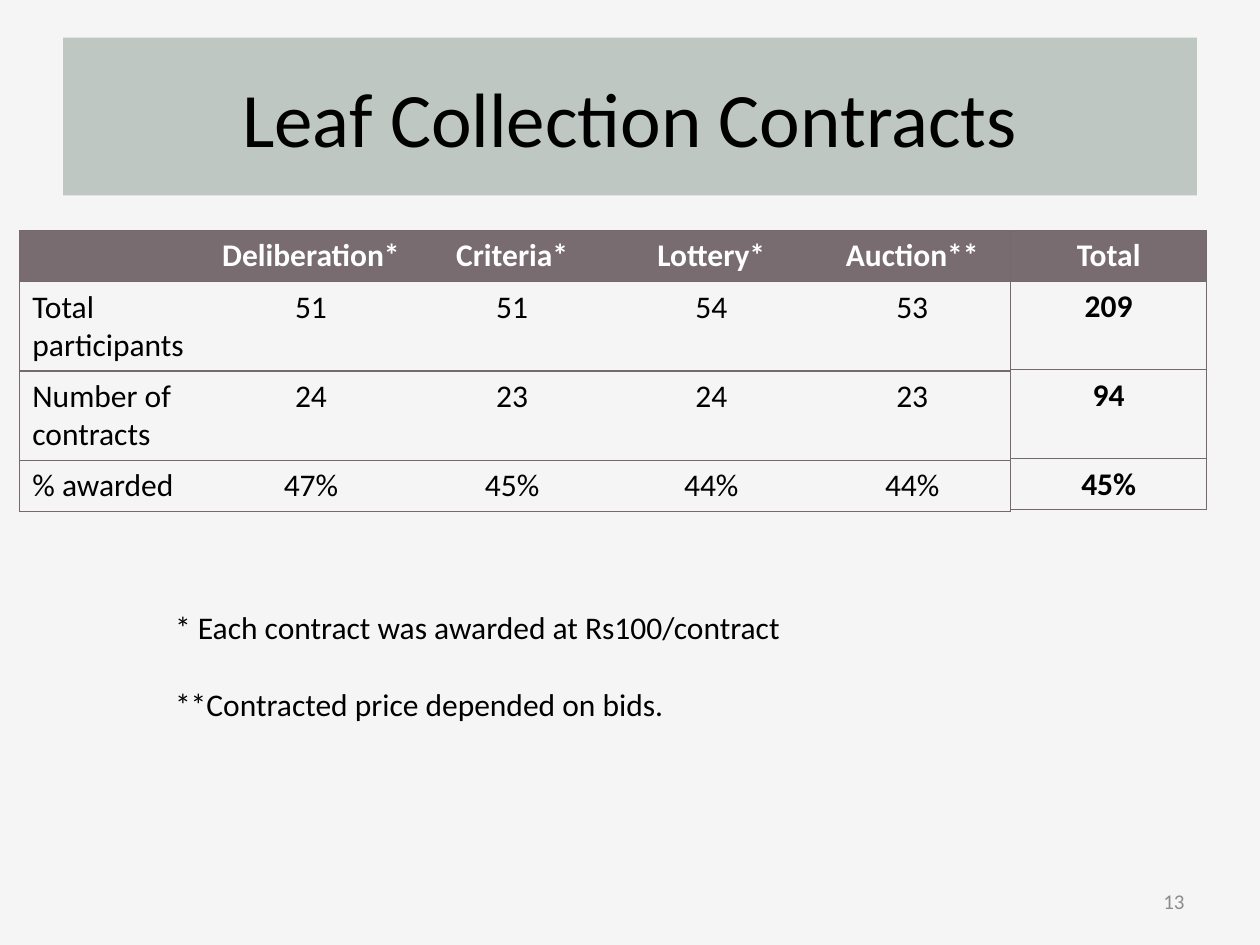
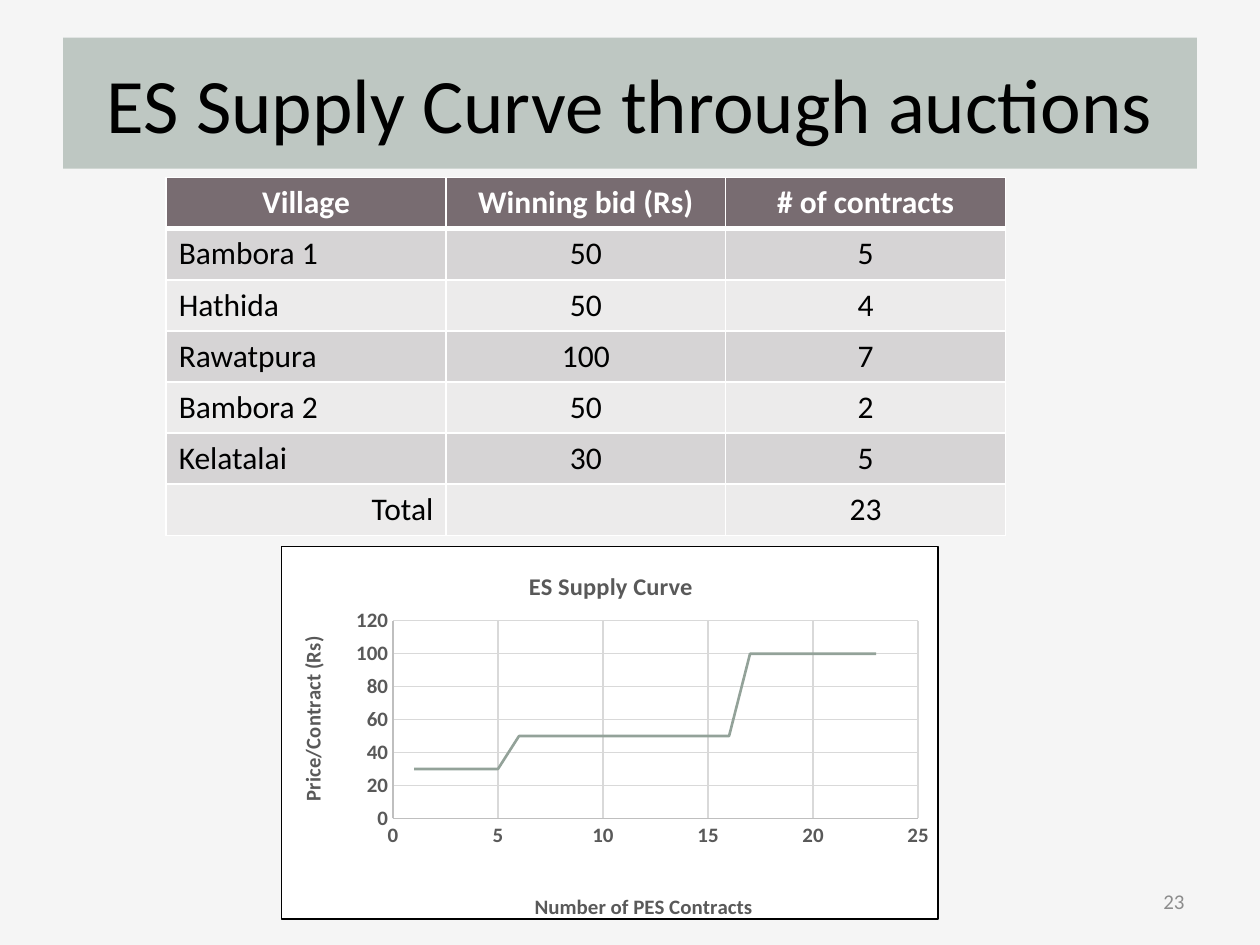
import lxml.etree
import pptx
import pptx.chart.data
import pptx.dml.color
import pptx.enum.chart
import pptx.enum.text
import pptx.oxml
import pptx.oxml.ns
import pptx.util

Cm, Pt = pptx.util.Cm, pptx.util.Pt
qn = pptx.oxml.ns.qn
ALIGN = pptx.enum.text.PP_ALIGN
MIDDLE = pptx.enum.text.MSO_ANCHOR.MIDDLE

# Content
CONTRACTS = [
    ["", "Deliberation*", "Criteria*", "Lottery*", "Auction**"],
    ["Total participants", "51", "51", "54", "53"],
    ["Number of contracts", "24", "23", "24", "23"],
    ["% awarded", "47%", "45%", "44%", "44%"],
]
CONTRACT_TOTALS = [["Total"], ["209"], ["94"], ["45%"]]
FOOTNOTES = [
    "* Each contract was awarded at Rs100/contract",
    "**Contracted price depended on bids.",
]
BID_HEADER = ["Village", "Winning bid (Rs)", "# of contracts"]
BIDS = [
    ("Bambora 1", 50, 5),
    ("Hathida", 50, 4),
    ("Rawatpura", 100, 7),
    ("Bambora 2", 50, 2),
    ("Kelatalai", 30, 5),
]

# Shared look
FONT = "Calibri"
PAGE, BAND, INK, WHITE = "F5F5F5", "BEC7C2", "000000", "FFFFFF"
HEADER, RULE, NUMBER = "786C71", "76696E", "8C8C8C"
STRIPES = ["D6D4D5", "ECEBEB"]
CHART_TEXT, GRID, AXIS, CURVE = "595959", "D9D9D9", "BFBFBF", "93A299"


def color(value):
    return pptx.dml.color.RGBColor.from_string(value)


def fill_with(fill, value):
    fill.solid()
    fill.fore_color.rgb = color(value)


def draw_line(line, value, width):
    fill_with(line.fill, value)
    line.width = Pt(width)


def set_font(font, size, value=INK, bold=False):
    font.name, font.size, font.bold = FONT, Pt(size), bold
    font.color.rgb = color(value)


def add_span(para, text, size, value=INK, bold=False, align=ALIGN.LEFT):
    para.alignment = align
    span = para.add_run()
    span.text = text
    set_font(span.font, size, value, bold)


def add_box(page, left, top, width, height):
    box = page.shapes.add_textbox(Cm(left), Cm(top), Cm(width), Cm(height))
    box.text_frame.word_wrap = True
    return box.text_frame


def add_page(deck, title, band_height, number):
    """Page with a title band and a page number."""
    page = deck.slides.add_slide(deck.slide_layouts[5])
    fill_with(page.background.fill, PAGE)
    band = page.shapes.title
    band.left, band.top = Cm(1.27), Cm(0.76)
    band.width, band.height = Cm(22.86), Cm(band_height)
    fill_with(band.fill, BAND)
    frame = band.text_frame
    frame.auto_size = pptx.enum.text.MSO_AUTO_SIZE.NONE
    frame.vertical_anchor = MIDDLE
    add_span(frame.paragraphs[0], title, 44, align=ALIGN.CENTER)

    frame = add_box(page, 18.2, 17.65, 5.93, 1.02)
    frame.vertical_anchor = MIDDLE
    add_span(frame.paragraphs[0], number, 12, NUMBER, align=ALIGN.RIGHT)
    return page


def set_borders(cell, borders):
    """borders maps each of L, R, T, B to (colour, points) or None."""
    properties = cell._tc.get_or_add_tcPr()
    for index, side in enumerate("LRTB"):
        edge = lxml.etree.Element(qn(f"a:ln{side}"))
        if borders[side]:
            value, width = borders[side]
            edge.set("w", str(Pt(width)))
            solid = lxml.etree.SubElement(edge, qn("a:solidFill"))
            lxml.etree.SubElement(solid, qn("a:srgbClr"), val=value)
        else:
            lxml.etree.SubElement(edge, qn("a:noFill"))
        properties.insert(index, edge)


def add_grid(page, rows, left, top, widths, heights, border_rule,
             stripes=None, bold=False):
    """Table with a dark header; border_rule(row, column) gives the edges."""
    table = page.shapes.add_table(
        len(rows), len(widths), Cm(left), Cm(top),
        Cm(sum(widths)), Cm(sum(heights))).table
    table.horz_banding = False
    for column, width in zip(table.columns, widths):
        column.width = Cm(width)
    for row, height in zip(table.rows, heights):
        row.height = Cm(height)
    for r, texts in enumerate(rows):
        for c, text in enumerate(texts):
            cell = table.cell(r, c)
            if r == 0:
                fill_with(cell.fill, HEADER)
            elif stripes:
                fill_with(cell.fill, stripes[(r - 1) % len(stripes)])
            else:
                cell.fill.background()
            set_borders(cell, border_rule(r, c))
            align = ALIGN.CENTER
            if text == "Total" and r > 0:
                align = ALIGN.RIGHT
            elif c == 0 and r > 0 and len(widths) > 1:
                align = ALIGN.LEFT
            para = cell.text_frame.paragraphs[0]
            if text:
                add_span(para, text, 18, INK if r else WHITE,
                         bold or r == 0, align)
            else:
                para.font.size = Pt(18)


def place(element, index, **fractions):
    """Fix a chart part at fractions of the chart area."""
    old = element.find(qn("c:layout"))
    if old is not None:
        element.remove(old)
    layout = lxml.etree.Element(qn("c:layout"))
    manual = lxml.etree.SubElement(layout, qn("c:manualLayout"))
    if "w" in fractions:
        lxml.etree.SubElement(manual, qn("c:layoutTarget"), val="inner")
    for name in ("x", "y"):
        lxml.etree.SubElement(manual, qn(f"c:{name}Mode"), val="edge")
    for name, value in fractions.items():
        lxml.etree.SubElement(manual, qn(f"c:{name}"), val=str(value))
    element.insert(index, layout)


def add_chart_title(title, text, size, x, y):
    add_span(title.text_frame.paragraphs[0], text, size, CHART_TEXT, True,
             ALIGN.CENTER)
    place(title._element, 1, x=x, y=y)


def add_supply_curve(page):
    # Cheapest contracts come first
    prices = sorted(bid for _, bid, count in BIDS for _ in range(count))
    data = pptx.chart.data.XyChartData()
    points = data.add_series("Series 1")
    for contract, price in enumerate(prices, 1):
        points.add_data_point(contract, price)
    kind = pptx.enum.chart.XL_CHART_TYPE.XY_SCATTER_LINES_NO_MARKERS
    chart = page.shapes.add_chart(
        kind, Cm(5.66), Cm(11), Cm(13.26), Cm(7.67), data).chart
    chart.has_legend = False
    set_font(chart.font, 10)
    chart.has_title = True
    add_chart_title(chart.chart_title, "ES Supply Curve", 14, 0.37, 0.05)

    plot = chart.plots[0]
    plot.vary_by_categories = False
    curve = plot.series[0]
    curve.smooth = False
    draw_line(curve.format.line, CURVE, 1.5)

    axes = [
        (chart.category_axis, "Number of PES Contracts", 25, 5, 0.38, 0.92),
        (chart.value_axis, "Price/Contract (Rs)", 120, 20, 0.02, 0.24),
    ]
    for axis, text, maximum, step, x, y in axes:
        axis.minimum_scale, axis.maximum_scale = 0, maximum
        axis.major_unit = step
        axis.major_tick_mark = pptx.enum.chart.XL_TICK_MARK.NONE
        axis.minor_tick_mark = pptx.enum.chart.XL_TICK_MARK.NONE
        axis.has_major_gridlines = True
        draw_line(axis.major_gridlines.format.line, GRID, 0.75)
        draw_line(axis.format.line, AXIS, 0.75)
        set_font(axis.tick_labels.font, 12, CHART_TEXT, True)
        axis.has_title = True
        add_chart_title(axis.axis_title, text, 12, x, y)

    # Plot position, then white area with a black frame
    body = chart.element.find(qn("c:chart"))
    place(body.find(qn("c:plotArea")), 0, x=0.17, y=0.2, w=0.8, h=0.53)
    body.addnext(pptx.oxml.parse_xml(
        f'<c:spPr {pptx.oxml.ns.nsdecls("c", "a")}>'
        f'<a:solidFill><a:srgbClr val="{WHITE}"/></a:solidFill>'
        f'<a:ln w="{Pt(0.75)}"><a:solidFill><a:srgbClr val="{INK}"/>'
        '</a:solidFill></a:ln></c:spPr>'))


def build_contracts(deck):
    page = add_page(deck, "Leaf Collection Contracts", 3.18, "13")
    rule = (RULE, 0.75)
    widths = [3.76, 4.22, 3.89, 4.14, 3.96]
    left, top = 0.4, 4.65

    def outer_sides(row, column):
        return {"L": rule if column == 0 else None,
                "R": rule if column == len(widths) - 1 else None,
                "T": rule, "B": rule}

    add_grid(page, CONTRACTS, left, top, widths,
             [1.03, 1.8, 1.8, 1.03], outer_sides)
    add_grid(page, CONTRACT_TOTALS, left + sum(widths), top, widths[-1:],
             [1.01, 1.79, 1.79, 1.01],
             lambda row, column: dict.fromkeys("LRTB", rule), bold=True)

    frame = add_box(page, 3.28, 12.14, 14.5, 3.33)
    for index, note in enumerate(FOOTNOTES):
        para = frame.add_paragraph() if index else frame.paragraphs[0]
        para.space_before = Pt(22 if index else 0)
        add_span(para, note, 18)


def build_auctions(deck):
    page = add_page(deck, "ES Supply Curve through auctions", 2.64, "23")
    total = sum(count for _, _, count in BIDS)
    rows = [BID_HEADER, *([str(value) for value in bid] for bid in BIDS),
            ["Total", "", str(total)]]

    def white_edges(row, column):
        thin, thick = (WHITE, 1), (WHITE, 3)
        return {"L": thin, "R": thin, "T": thick if row == 1 else thin,
                "B": thick if row == 0 else thin}

    add_grid(page, rows, 3.35, 3.58, [5.64] * 3, [1.03] * len(rows),
             white_edges, STRIPES)
    add_supply_curve(page)


def main():
    deck = pptx.Presentation()
    deck.slide_width, deck.slide_height = Cm(25.4), Cm(19.05)
    build_contracts(deck)
    build_auctions(deck)
    deck.save("out.pptx")


if __name__ == "__main__":
    main()
